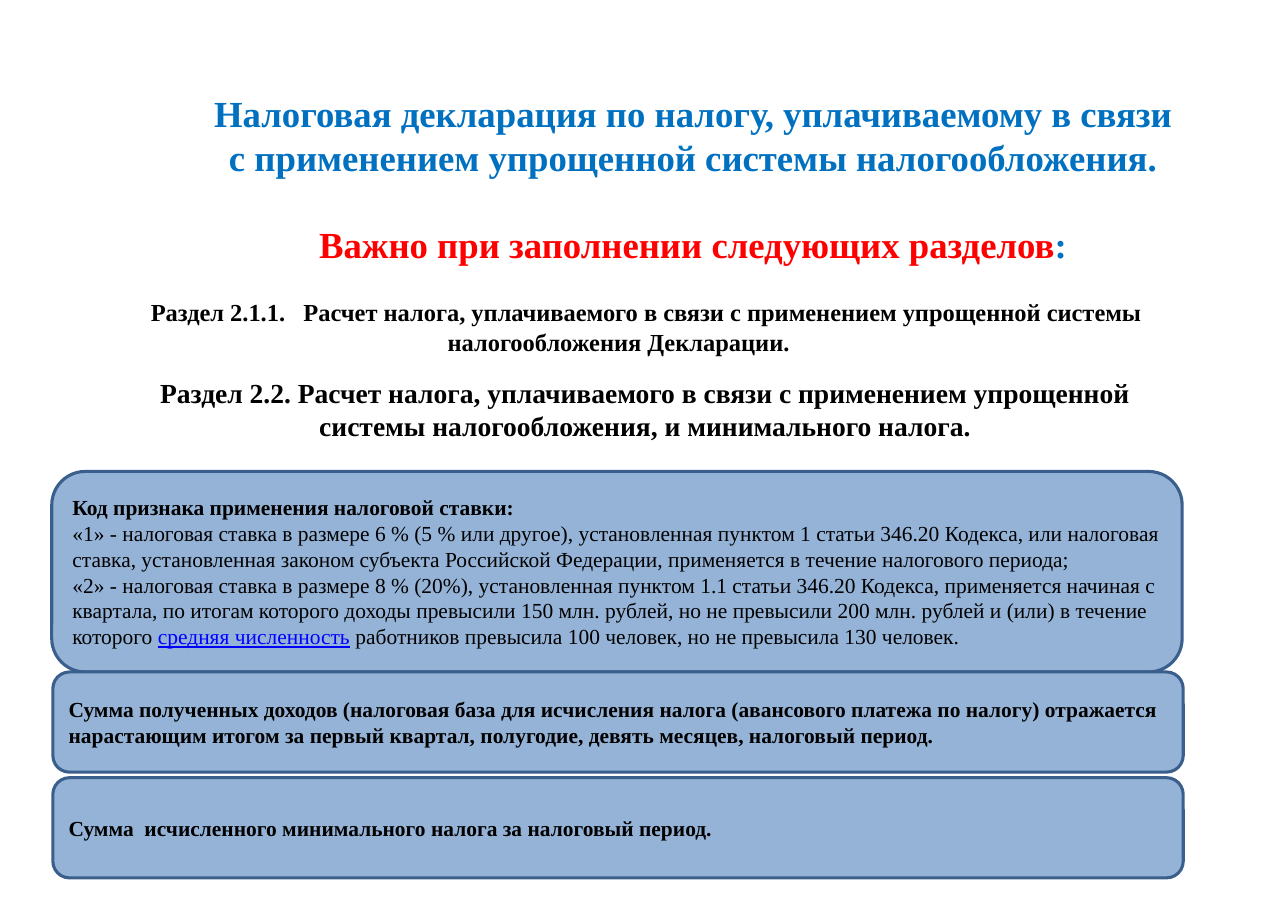
from pptx import Presentation
from pptx import util as u
from pptx.dml.color import RGBColor
from pptx.enum import shapes, text

PX = 9144  # 100 px to the inch


def px(length):
    return u.Emu(length * PX)


def colour(hex_value):
    return RGBColor.from_string(hex_value)


class Page:
    FONT = "Times New Roman"
    BLACK, BLUE, RED, LINK = "000000", "0070C0", "FF0000", "0000FF"
    PANEL, BORDER = "95B3D7", "3A5F8C"

    def __init__(self, deck):
        self.slide = deck.slides.add_slide(deck.slide_layouts[5])

    def fill_text(self, frame, paragraphs, size, align, frame_format):
        """Fill the frame; a paragraph is a list of (words, font format) runs."""
        for name, value in {"word_wrap": True, **frame_format}.items():
            setattr(frame, name, value)
        for index, runs in enumerate(paragraphs):
            paragraph = frame.add_paragraph() if index else frame.paragraphs[0]
            paragraph.alignment = align
            for words, changes in runs:
                run = paragraph.add_run()
                run.text = words
                style = {"name": self.FONT, "size": u.Pt(size), "bold": True,
                         "color": self.BLACK, **changes}
                run.font.color.rgb = colour(style.pop("color"))
                for name, value in style.items():
                    setattr(run.font, name, value)

    def title(self, box, paragraphs, size, gap):
        heading = self.slide.shapes.title
        for name, length in zip(("left", "top", "width", "height"), box):
            setattr(heading, name, px(length))
        frame = heading.text_frame
        self.fill_text(frame, paragraphs, size, text.PP_ALIGN.CENTER, {
            "auto_size": text.MSO_AUTO_SIZE.NONE,
            "vertical_anchor": text.MSO_ANCHOR.MIDDLE,
            "margin_left": px(11), "margin_right": px(11),
            "margin_top": px(6), "margin_bottom": px(6)})
        for paragraph in frame.paragraphs[1:]:
            paragraph.space_before = u.Pt(gap)

    def section(self, box, words, size):
        label = self.slide.shapes.add_textbox(*map(px, box))
        self.fill_text(label.text_frame, [[(words, {})]], size, text.PP_ALIGN.CENTER,
                       {"auto_size": text.MSO_AUTO_SIZE.SHAPE_TO_FIT_TEXT})

    def panel(self, box, paragraphs):
        panel = self.slide.shapes.add_shape(
            shapes.MSO_SHAPE.ROUNDED_RECTANGLE, *map(px, box))
        panel.shadow.inherit = False
        panel.fill.solid()
        panel.fill.fore_color.rgb = colour(self.PANEL)
        panel.line.color.rgb = colour(self.BORDER)
        panel.line.width = u.Pt(2)
        self.fill_text(panel.text_frame, paragraphs, 14, text.PP_ALIGN.LEFT,
                       {"vertical_anchor": text.MSO_ANCHOR.MIDDLE})


def main():
    deck = Presentation()
    deck.slide_width, deck.slide_height = px(1169), px(827)
    page = Page(deck)

    page.title((175, 59, 908, 206), [
        [("Налоговая декларация по налогу, уплачиваемому в связи с применением "
          "упрощенной системы налогообложения.", {"color": page.BLUE})],
        [("Важно при заполнении следующих разделов", {"color": page.RED}),
         (":", {"color": page.BLUE})],
    ], size=24, gap=28)

    page.section((29, 265, 1065, 67),
                 "\tРаздел 2.1.1.   Расчет налога, уплачиваемого в связи с применением "
                 "упрощенной системы налогообложения Декларации.", 16)
    page.section((97, 336, 977, 71),
                 "Раздел 2.2. Расчет налога, уплачиваемого в связи с применением "
                 "упрощенной системы налогообложения, и минимального налога.", 18)

    plain = {"bold": False}
    link = {"bold": False, "color": page.LINK, "underline": True}
    page.panel((47, 428, 1026, 182), [
        [("Код признака применения налоговой ставки:", {})],
        [("«1» - налоговая ставка в размере 6 % (5 % или другое), установленная "
          "пунктом 1 статьи 346.20 Кодекса, или налоговая ставка, установленная "
          "законом субъекта Российской Федерации, применяется в течение "
          "налогового периода;", plain)],
        [("«2» - налоговая ставка в размере 8 % (20%), установленная пунктом 1.1 "
          "статьи 346.20 Кодекса, применяется начиная с квартала, по итогам "
          "которого доходы превысили 150 млн. рублей, но не превысили 200 млн. "
          "рублей и (или) в течение которого ", plain),
         ("средняя численность", link),
         (" работников превысила 100 человек, но не превысила 130 человек.", plain)],
    ])

    totals = (
        "Сумма полученных доходов (налоговая база для исчисления налога "
        "(авансового платежа по налогу) отражается нарастающим итогом за первый "
        "квартал, полугодие, девять месяцев, налоговый период.",
        "Сумма  исчисленного минимального налога за налоговый период.",
    )
    for row, words in enumerate(totals):
        page.panel((48, 610 + 96 * row, 1026, 91), [[(words, {})]])

    deck.save("out.pptx")


if __name__ == "__main__":
    main()
